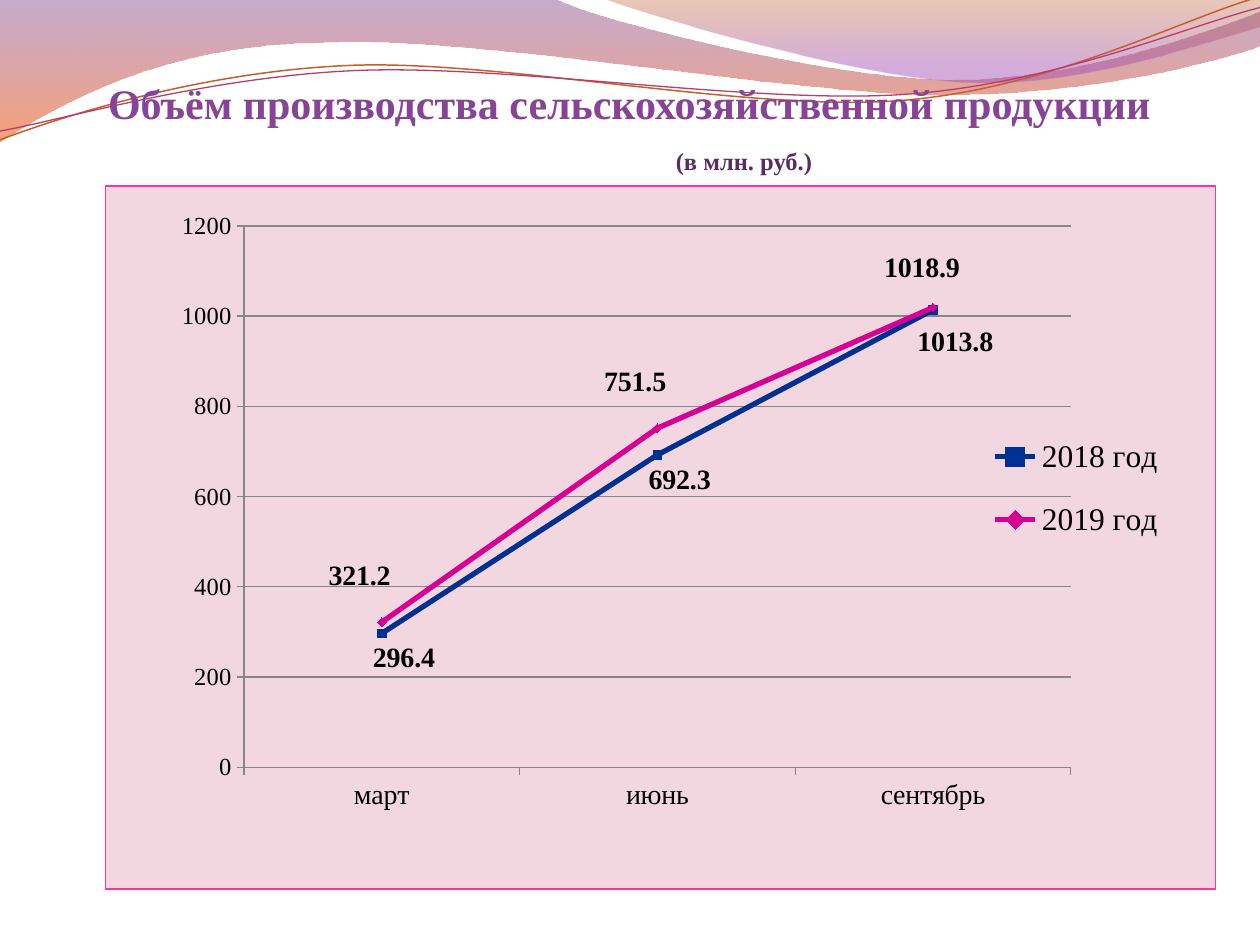
from dataclasses import dataclass

from lxml import etree
from pptx import Presentation
from pptx.chart.data import CategoryChartData
from pptx.dml.color import RGBColor
from pptx.enum.chart import XL_CHART_TYPE as ChartType
from pptx.enum.chart import XL_LABEL_POSITION as LabelPos
from pptx.enum.chart import XL_LEGEND_POSITION as LegendPos
from pptx.enum.chart import XL_MARKER_STYLE as Marker
from pptx.enum.chart import XL_TICK_MARK as Tick
from pptx.enum.text import MSO_ANCHOR, MSO_AUTO_SIZE, PP_ALIGN
from pptx.oxml import parse_xml
from pptx.oxml.ns import nsdecls, qn
from pptx.util import Inches, Pt

FONT = "Times New Roman"
BLACK = RGBColor(0x00, 0x00, 0x00)
GREY = RGBColor(0x86, 0x86, 0x86)
TITLE_PURPLE = RGBColor(0x87, 0x43, 0x96)
DARK_PURPLE = RGBColor(0x5A, 0x2C, 0x64)
WAVE_PURPLE = RGBColor(0x83, 0x45, 0x91)
WAVE_ORANGE = RGBColor(0xF3, 0x53, 0x07)
WAVE_BROWN = RGBColor(0xB7, 0x49, 0x15)
WAVE_LILAC = RGBColor(0xA1, 0x4B, 0xB4)
LINE_BROWN = RGBColor(0xC4, 0x5F, 0x30)
LINE_ROSE = RGBColor(0xB8, 0x3D, 0x68)
BLUE = RGBColor(0x00, 0x31, 0x92)
MAGENTA = RGBColor(0xD6, 0x00, 0x93)
CHART_PINK = RGBColor(0xF2, 0xD7, 0xE0)
BORDER_PINK = RGBColor(0xFF, 0x33, 0x99)


@dataclass
class Stop:
    position: float
    color: RGBColor
    opacity: int


@dataclass
class Wave:
    """An outline: a start, then points (2 numbers) or Bezier curves (6 numbers)."""
    start: tuple
    segments: list
    stops: tuple = ()
    line: RGBColor | None = None
    width: float = 0


@dataclass
class YearLine:
    name: str
    values: tuple
    color: RGBColor
    marker: Marker
    label_pos: LabelPos
    label_shifts: tuple


WAVES = [
    Wave((0, -0.01), [
        (4.4, -0.01), (4.76, 0.17, 6.64, 0.63, 7.58, 0.63),
        (8.53, 0.63, 9.58, 0.26, 10, 0.09), (10.01, 0.36),
        (9.83, 0.44, 8.7, 0.76, 7.46, 0.75), (6.22, 0.75, 3.82, 0.28, 2.57, 0.34),
        (1.29, 0.35, 0.46, 0.83, -0.01, 1.13), (0, -0.01)],
        stops=(Stop(0, WAVE_PURPLE, 45), Stop(1, WAVE_ORANGE, 55))),
    Wave((4.79, -0.01), [
        (5.09, 0.11, 6.82, 0.62, 7.69, 0.65), (8.56, 0.69, 9.61, 0.32, 10, 0.21),
        (10, 0), (4.79, -0.01)],
        stops=(Stop(0, WAVE_BROWN, 30), Stop(0.8, WAVE_LILAC, 45))),
    Wave((0, 1.11), [
        (0.48, 0.93, 1.58, 0.57, 2.77, 0.52), (3.95, 0.47, 5.93, 0.89, 7.13, 0.8),
        (8.33, 0.71, 9.38, 0.15, 9.98, -0.02)], line=LINE_BROWN, width=0.85),
    Wave((0, 1.04), [
        (0.47, 0.96, 1.64, 0.61, 2.83, 0.56), (4.03, 0.51, 5.97, 0.83, 7.17, 0.75),
        (8.36, 0.67, 9.41, 0.21, 10, 0.06)], line=LINE_ROSE, width=0.75),
]
MONTHS = ("март", "июнь", "сентябрь")
YEARS = [
    YearLine("2018 год", (296.4, 692.3, 1013.8), BLUE, Marker.SQUARE, LabelPos.BELOW,
             ((0.02, 0), (0.02, 0), (0.02, 0.01))),
    YearLine("2019 год", (321.2, 751.5, 1018.9), MAGENTA, Marker.DIAMOND, LabelPos.ABOVE,
             ((-0.02, -0.03), (-0.02, -0.03), (-0.01, -0.02))),
]


def set_font(font, size: float, color: RGBColor = BLACK, bold: bool = False) -> None:
    for name, value in dict(name=FONT, size=Pt(size), bold=bold).items():
        setattr(font, name, value)
    font.color.rgb = color


def bend(sp, wave: Wave) -> None:
    """Turn the straight segments that have control points into Bezier curves."""
    for line_to, seg in zip(list(sp._element.iter(qn("a:lnTo"))), wave.segments):
        if len(seg) == 2:
            continue
        line_to.remove(line_to[0])
        line_to.tag = qn("a:cubicBezTo")
        for x, y in zip(seg[::2], seg[1::2]):
            etree.SubElement(line_to, qn("a:pt"), x=str(Inches(x) - sp.left),
                             y=str(Inches(y) - sp.top))


def draw_wave(slide, wave: Wave) -> None:
    start, *ends = [(Inches(s[-2]), Inches(s[-1])) for s in (wave.start, *wave.segments)]
    builder = slide.shapes.build_freeform(*start)
    builder.add_line_segments(ends, close=bool(wave.stops))
    sp = builder.convert_to_shape()
    bend(sp, wave)
    sp.shadow.inherit = False
    if wave.stops:
        sp.line.fill.background()
        sp.fill.gradient()
        sp.fill.gradient_angle = 270
        for target, stop in zip(sp.fill.gradient_stops, wave.stops):
            target.position = stop.position
            target.color.rgb = stop.color
        for clr, stop in zip(sp._element.spPr.iter(qn("a:srgbClr")), wave.stops):
            etree.SubElement(clr, qn("a:alpha"), val=str(stop.opacity * 1000))
    else:
        sp.fill.background()
        sp.line.color.rgb = wave.line
        sp.line.width = Pt(wave.width)


def write_title(slide) -> None:
    title = slide.shapes.title
    slide.shapes._spTree.append(title._element)  # in front of the waves
    title.left, title.top = Inches(0.83), Inches(0.68)
    title.width, title.height = Inches(8.58), Inches(0.73)
    tf = title.text_frame
    frame = dict(auto_size=MSO_AUTO_SIZE.NONE, word_wrap=True,
                 vertical_anchor=MSO_ANCHOR.BOTTOM, margin_left=0,
                 margin_right=Inches(0.25), margin_top=Inches(0.05),
                 margin_bottom=Inches(0.02))
    for name, value in frame.items():
        setattr(tf, name, value)
    p, unit = tf.paragraphs[0], tf.add_paragraph()
    for par, text, size, color in (
            (p, "Объём производства сельскохозяйственной продукции", 24, TITLE_PURPLE),
            (unit, "(в млн. руб.)", 14, DARK_PURPLE)):
        par.alignment = PP_ALIGN.CENTER
        r = par.add_run()
        r.text = text
        set_font(r.font, size, color, bold=True)
    unit.space_before = Pt(10)
    unit._p.get_or_add_pPr().set("marL", str(Inches(1.82)))


def place(element, index: int, inner: bool = False, **fractions: float) -> None:
    """Give a chart part a manual layout in fractions of the chart."""
    for old in element.findall(qn("c:layout")):
        element.remove(old)
    layout = parse_xml(f"<c:layout {nsdecls('c')}><c:manualLayout/></c:layout>")
    settings = {"layoutTarget": "inner"} if inner else {}
    if "w" in fractions:
        settings.update(xMode="edge", yMode="edge")
    for tag, value in {**settings, **fractions}.items():
        etree.SubElement(layout[0], qn(f"c:{tag}"), val=str(value))
    element.insert(index, layout)


def style_series(series, year: YearLine) -> None:
    series.smooth = False
    series.format.line.color.rgb = year.color
    series.format.line.width = Pt(3)
    series.marker.style, series.marker.size = year.marker, 5
    series.marker.format.fill.solid()
    series.marker.format.fill.fore_color.rgb = year.color
    series.marker.format.line.color.rgb = year.color
    for i in range(len(year.values)):
        label = series.points[i].data_label
        set_font(label.font, 16, bold=True)
        label.position = year.label_pos
    for d_lbl, (x, y) in zip(series._element.iter(qn("c:dLbl")), year.label_shifts):
        place(d_lbl, 1, x=x, y=y)
    for leader in series._element.iter(qn("c:showLeaderLines")):
        leader.set("val", "0")


def add_output_chart(slide) -> None:
    data = CategoryChartData()
    data.categories = MONTHS
    for year in YEARS:
        data.add_series(year.name, year.values)
    chart = slide.shapes.add_chart(ChartType.LINE_MARKERS, Inches(0.83), Inches(1.47),
                                   Inches(8.82), Inches(5.59), data).chart
    set_font(chart.font, 18)
    chart.has_title = False
    chart.has_legend = True
    chart.legend.position = LegendPos.RIGHT
    chart.legend.include_in_layout = False
    set_font(chart.legend.font, 18)
    for axis, size in ((chart.category_axis, 16), (chart.value_axis, 14)):
        axis.major_tick_mark, axis.minor_tick_mark = Tick.OUTSIDE, Tick.NONE
        axis.format.line.color.rgb = GREY
        set_font(axis.tick_labels.font, size)
    value_axis = chart.value_axis
    value_axis.minimum_scale, value_axis.maximum_scale, value_axis.major_unit = 0, 1200, 200
    value_axis.major_gridlines.format.line.color.rgb = GREY
    chart.plots[0].vary_by_categories = False
    for series, year in zip(chart.plots[0].series, YEARS):
        style_series(series, year)
    space = chart._chartSpace
    place(space.chart.plotArea, 0, inner=True, x=0.125, y=0.057, w=0.745, h=0.77)
    place(chart.legend._element, 1, x=0.79, y=0.32, w=0.17, h=0.22)
    space.chart.addnext(parse_xml(
        f"<c:spPr {nsdecls('c', 'a')}>"
        f'<a:solidFill><a:srgbClr val="{CHART_PINK}"/></a:solidFill>'
        f'<a:ln w="{Pt(0.75)}"><a:solidFill><a:srgbClr val="{BORDER_PINK}"/></a:solidFill>'
        "</a:ln></c:spPr>"))


def main() -> None:
    prs = Presentation()
    prs.slide_width, prs.slide_height = Inches(10), Inches(7.5)
    slide = prs.slides.add_slide(prs.slide_layouts[5])
    for wave in WAVES:
        draw_wave(slide, wave)
    write_title(slide)
    add_output_chart(slide)
    prs.save("out.pptx")


if __name__ == "__main__":
    main()
